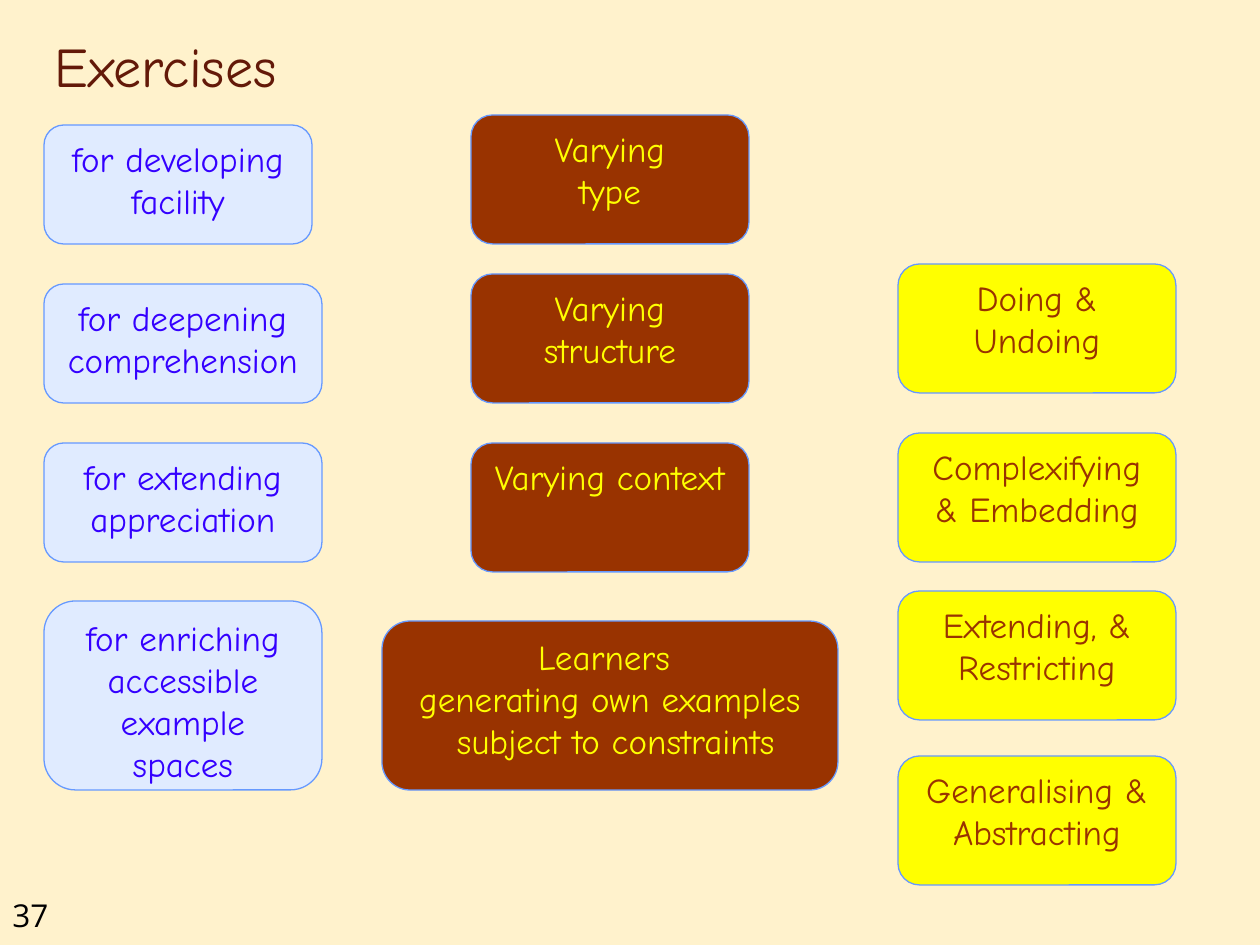
from pptx import Presentation
from pptx.dml.color import RGBColor
from pptx.enum.shapes import MSO_SHAPE as Shape
from pptx.enum.text import MSO_ANCHOR as Anchor, PP_ALIGN as Align
from pptx.util import Emu, Pt

PX = 914400 / 126
COLOURS = {
    "background": "FFF2CC", "title": "631908", "number": "000000",
    "outline": "6699FF", "pale": "E0EBFF", "violet": "3400FF",
    "brown": "993300", "yellow": "FFFF00",
}
HAND_FONT = "Comic Neue"
BOX_WIDTH = 278

PURPOSES = [
    ((44, 125, 268, 119), "for developing facility"),
    ((44, 284, BOX_WIDTH, 119), "for deepening comprehension"),
    ((44, 443, BOX_WIDTH, 119), "for extending appreciation"),
    ((44, 601, BOX_WIDTH, 189), "for enriching accessible example spaces"),
]
VARIATIONS = [
    ((471, 115, BOX_WIDTH, 129), "Varying\vtype"),
    ((471, 274, BOX_WIDTH, 129), "Varying\vstructure"),
    ((471, 443, BOX_WIDTH, 129), "Varying context"),
    ((382, 621, 456, 169),
     "Learners \vgenerating own examples\v subject to constraints"),
]
THEMES = [
    ((898, 264, BOX_WIDTH, 129), "Doing & Undoing"),
    ((898, 433, BOX_WIDTH, 129), "Complexifying\n& Embedding"),
    ((898, 591, BOX_WIDTH, 129), "Extending, & Restricting"),
    ((898, 756, BOX_WIDTH, 129), "Generalising & Abstracting"),
]


def colour(name):
    """Return the named colour."""
    return RGBColor.from_string(COLOURS[name])


def emu(box):
    """Turn a box in px into EMU lengths."""
    return [Emu(round(length * PX)) for length in box]


def write_text(shape, text, font_name, size, colour_name, align, anchor):
    """Fill a shape with text in one format."""
    frame = shape.text_frame
    frame.text = text
    frame.word_wrap = True
    frame.vertical_anchor = anchor
    formats = {"name": font_name, "size": Pt(size), "bold": False}
    for paragraph in frame.paragraphs:
        paragraph.alignment = align
        for run in paragraph.runs:
            for attribute, value in formats.items():
                setattr(run.font, attribute, value)
            run.font.color.rgb = colour(colour_name)


def add_label(slide, box, text, font_name, size, colour_name, anchor):
    """Place a left-aligned text box."""
    shape = slide.shapes.add_textbox(*emu(box))
    write_text(shape, text, font_name, size, colour_name, Align.LEFT, anchor)


def add_column(slide, cards, fill_name, text_name):
    """Place one column of rounded cards."""
    for box, text in cards:
        shape = slide.shapes.add_shape(Shape.ROUNDED_RECTANGLE, *emu(box))
        shape.shadow.inherit = False
        shape.fill.solid()
        shape.fill.fore_color.rgb = colour(fill_name)
        shape.line.color.rgb = colour("outline")
        shape.line.width = Pt(0.75)
        write_text(shape, text, HAND_FONT, 20, text_name, Align.CENTER, Anchor.TOP)


def main():
    """Build and save the slide."""
    presentation = Presentation()
    presentation.slide_width, presentation.slide_height = emu((1260, 945))
    slide = presentation.slides.add_slide(presentation.slide_layouts[6])
    slide.background.fill.solid()
    slide.background.fill.fore_color.rgb = colour("background")
    add_label(slide, (0, 890, 94, 50), "37", "Open Sans", 18, "number", Anchor.TOP)
    add_label(slide, (42, 21, 1071, 84), "Exercises", HAND_FONT, 32, "title",
              Anchor.BOTTOM)
    add_column(slide, PURPOSES, "pale", "violet")
    add_column(slide, VARIATIONS, "brown", "yellow")
    add_column(slide, THEMES, "yellow", "brown")
    presentation.save("out.pptx")


if __name__ == "__main__":
    main()
